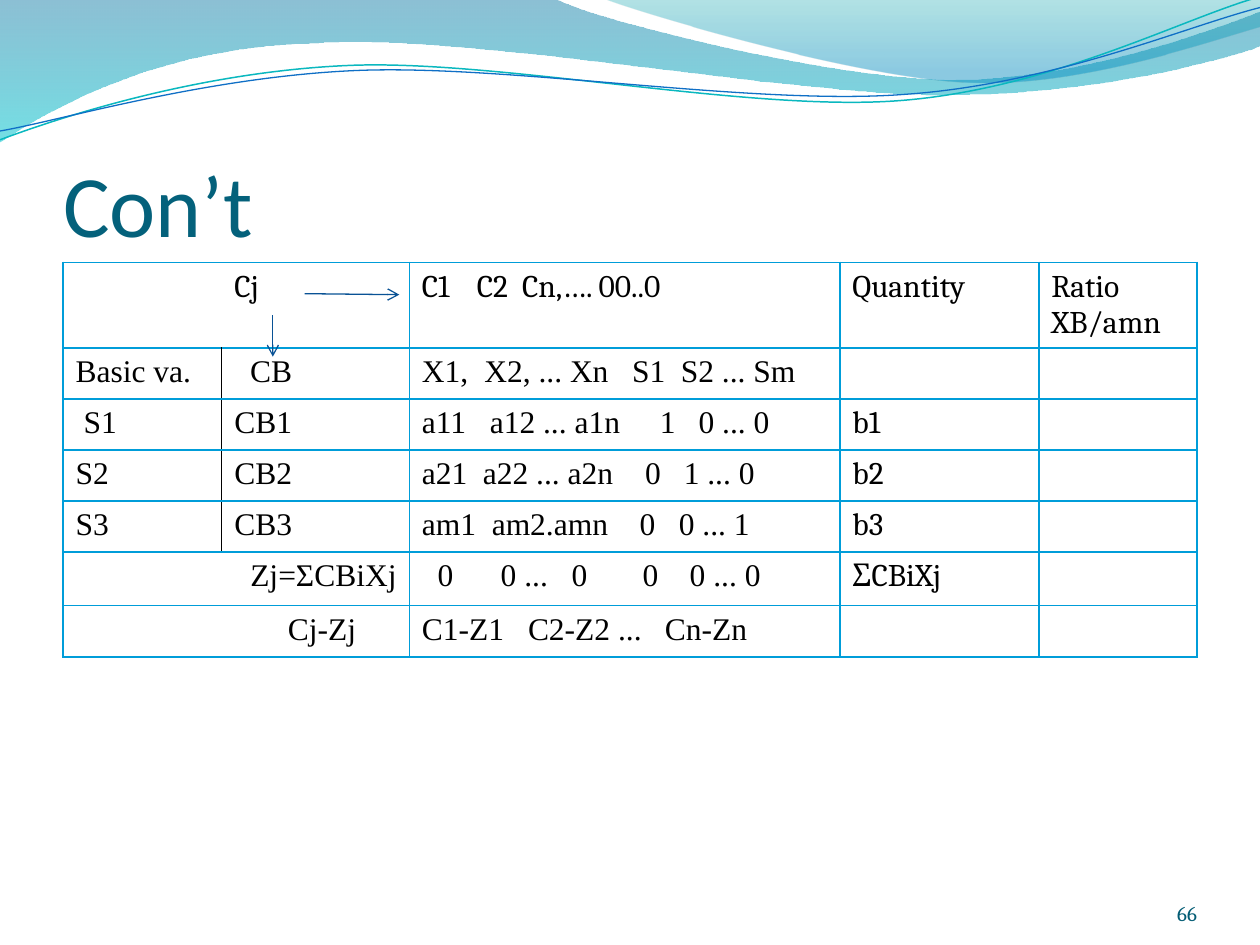
from lxml import etree
from pptx import Presentation
from pptx import util as u
from pptx.dml.color import RGBColor
from pptx.enum import shapes, text
from pptx.oxml import ns

WHITE = RGBColor(0xFF, 0xFF, 0xFF)
BLACK = RGBColor(0x00, 0x00, 0x00)
TITLE = RGBColor(0x04, 0x61, 0x7B)
NUMBER = RGBColor(0x04, 0x5D, 0x75)
BORDER = RGBColor(0x00, 0x9D, 0xD9)
ARROW = RGBColor(0x09, 0x52, 0x95)
TEAL = RGBColor(0x0A, 0xB8, 0xBF)
BLUE = RGBColor(0x0F, 0x6F, 0xC6)
BAND_TOP = RGBColor(0x00, 0x74, 0xA1)
BAND_END = RGBColor(0x00, 0xC6, 0xCF)
CREST_TOP = RGBColor(0x00, 0xA1, 0xA9)
CREST_END = RGBColor(0x00, 0x8B, 0xBF)
CM_PER_INCH = 2.54

BAND = [(0, 0), (4.4, -0.01), (4.76, 0.17, 6.64, 0.63, 7.58, 0.63),
        (8.53, 0.63, 9.58, 0.26, 10, 0.09), (10.01, 0.36),
        (9.83, 0.44, 8.7, 0.76, 7.46, 0.75), (6.22, 0.75, 3.82, 0.28, 2.57, 0.34),
        (1.29, 0.36, 0.46, 0.83, -0.01, 1.13), (0, 0)]
CREST = [(4.79, -0.01), (5.09, 0.11, 6.82, 0.62, 7.69, 0.65),
         (8.56, 0.69, 9.61, 0.32, 10, 0.21), (10, 0), (4.79, -0.01)]
TEAL_WAVE = [(0, 1.11), (0.48, 0.93, 1.58, 0.57, 2.77, 0.52),
             (3.95, 0.47, 5.93, 0.89, 7.13, 0.8), (8.33, 0.71, 9.38, 0.15, 9.98, -0.02)]
BLUE_WAVE = [(0, 1.04), (0.47, 0.96, 1.64, 0.61, 2.83, 0.56),
             (4.03, 0.51, 5.97, 0.84, 7.17, 0.75), (8.36, 0.67, 9.41, 0.21, 10, 0.06)]

COLS = [3.2, 3.78, 8.68, 4.01, 3.19]
ROWS = [1.03, 1.03, 1.03, 1.03, 1.03, 1.08, 1.03]
CELLS = [
    ["\tCj", "", "C1\tC2\tCn,…. 00..0", "Quantity", "Ratio\nXB/amn"],
    ["Basic va.", "\tCB", "X1,\tX2, ... Xn\tS1\tS2 ... Sm", "", ""],
    ["\tS1", "CB1", "a11\ta12 ... a1n\t1\t0 ... 0", "b1", ""],
    ["S2", "CB2", "a21\ta22 ... a2n\t0\t1 ... 0", "b2", ""],
    ["S3", "CB3", "am1\tam2.amn\t0\t0 ... 1", "b3", ""],
    ["Zj=ΣCBiXj", "", "\t0\t0 ...\t0\t0\t0 ... 0", "ΣCBiXj", ""],
    ["\tCj-Zj", "", "C1-Z1\tC2-Z2 ...\tCn-Zn", "", ""],
]
TABS = {
    (0, 0): [3.2], (1, 1): [0.32], (2, 0): [0.16], (6, 0): [4.28],
    (0, 2): [1.11, 2.02], (1, 2): [1.26, 4.24, 5.22],
    (2, 2): [1.37, 4.8, 5.58], (3, 2): [1.23, 4.5, 5.28],
    (4, 2): [1.41, 4.39, 5.18], (5, 2): [0.32, 1.59, 3.02, 4.45, 5.4],
    (6, 2): [2.14, 4.9],
}
MERGED_ROWS = (0, 5, 6)


class Deck:
    serif = "Cambria"
    roman = "Times New Roman"
    sans = "Calibri"

    def __init__(self, slide):
        self.s = slide
        bg = slide.background.fill
        bg.solid()
        bg.fore_color.rgb = WHITE

    def run(self, p, words, size, font, color):
        r = p.add_run()
        r.text = words
        r.font.size = u.Pt(size)
        r.font.name = font
        r.font.color.rgb = color

    def outline(self, segments, closed):
        points = [(u.Cm(x * CM_PER_INCH), u.Cm(y * CM_PER_INCH))
                  for seg in segments for x, y in zip(seg[::2], seg[1::2])]
        builder = self.s.shapes.build_freeform(*points[0])
        builder.add_line_segments(points[1:], close=closed)
        sp = builder.convert_to_shape()
        sp.shadow.inherit = False
        steps = iter(list(sp._element.iter(ns.qn("a:lnTo"))))
        for seg in segments[1:]:
            step = next(steps)
            if len(seg) == 6:
                curve = etree.Element(ns.qn("a:cubicBezTo"))
                step.addprevious(curve)
                for part in (step, next(steps), next(steps)):
                    curve.append(part[0])
                    part.getparent().remove(part)
        return sp

    def band(self, segments, stops):
        sp = self.outline(segments, True)
        sp.line.fill.background()
        sp.fill.gradient()
        sp.fill.gradient_angle = 270
        for stop, (position, color, _) in zip(sp.fill.gradient_stops, stops):
            stop.position = position
            stop.color.rgb = color
        colors = sp._element.spPr.iter(ns.qn("a:srgbClr"))
        for clr, (_, _, alpha) in zip(list(colors), stops):
            etree.SubElement(clr, ns.qn("a:alpha"), val=str(alpha * 1000))

    def wave(self, segments, color, width):
        sp = self.outline(segments, False)
        sp.fill.background()
        sp.line.color.rgb = color
        sp.line.width = u.Pt(width)

    def frame(self, sp, left, top, width, height):
        sp.left, sp.top, sp.width, sp.height = map(u.Cm, (left, top, width, height))
        tf = sp.text_frame
        tf.word_wrap = True
        tf.auto_size = text.MSO_AUTO_SIZE.NONE
        tf.vertical_anchor = text.MSO_ANCHOR.BOTTOM
        tf.margin_left = tf.margin_right = tf.margin_top = tf.margin_bottom = 0
        return tf

    def title(self, words, *box):
        tf = self.frame(self.s.shapes.title, *box)
        tf.margin_top = u.Cm(0.13)
        p = tf.paragraphs[0]
        p.alignment = text.PP_ALIGN.LEFT
        self.run(p, words, 50, self.sans, TITLE)

    def number(self, words, *box):
        sp = self.s.shapes.add_textbox(*map(u.Cm, box))
        p = self.frame(sp, *box).paragraphs[0]
        p.alignment = text.PP_ALIGN.RIGHT
        self.run(p, words, 12, self.serif, NUMBER)

    def borders(self, cell, colors):
        tcPr = cell._tc.get_or_add_tcPr()
        for side, color in zip("LRTB", colors):
            ln = etree.SubElement(tcPr, ns.qn("a:ln" + side), w=str(u.Pt(1)))
            fill = etree.SubElement(ln, ns.qn("a:solidFill"))
            etree.SubElement(fill, ns.qn("a:srgbClr"), val=str(color))

    def tabs(self, p, stops):
        tab_list = etree.SubElement(p._p.get_or_add_pPr(), ns.qn("a:tabLst"))
        for stop in stops:
            etree.SubElement(tab_list, ns.qn("a:tab"), pos=str(u.Cm(stop)), algn="l")

    def table(self, *box):
        frame = self.s.shapes.add_table(len(ROWS), len(COLS), *map(u.Cm, box))
        tbl = frame.table
        tbl.first_row = tbl.horz_banding = False
        for col, width in zip(tbl.columns, COLS):
            col.width = u.Cm(width)
        for i, height in enumerate(ROWS):
            tbl.rows[i].height = u.Cm(height)
            split = i not in MERGED_ROWS
            if not split:
                tbl.cell(i, 0).merge(tbl.cell(i, 1))
            for j, words in enumerate(CELLS[i]):
                cell = tbl.cell(i, j)
                self.borders(cell, (BLACK if split and j == 1 else BORDER,
                                    BLACK if split and j == 0 else BORDER, BORDER, BORDER))
                cell.fill.background()
                font = self.serif if i == 0 or j > 2 else self.roman
                for k, line in enumerate(words.split("\n") if words else []):
                    tf = cell.text_frame
                    p = tf.add_paragraph() if k else tf.paragraphs[0]
                    if (i, j) in TABS:
                        self.tabs(p, TABS[i, j])
                    self.run(p, line, 18, font, BLACK)
        tbl.cell(5, 0).text_frame.paragraphs[0].alignment = text.PP_ALIGN.RIGHT
        frame.height = u.Cm(box[3])

    def arrow(self, *ends):
        c = self.s.shapes.add_connector(shapes.MSO_CONNECTOR.STRAIGHT, *map(u.Cm, ends))
        c.line.color.rgb = ARROW
        c.line.width = u.Pt(0.75)
        etree.SubElement(c.line._get_or_add_ln(), ns.qn("a:tailEnd"), type="arrow")
        etree.SubElement(c._element.spPr, ns.qn("a:effectLst"))


def main():
    prs = Presentation()
    prs.slide_width, prs.slide_height = u.Cm(25.4), u.Cm(19.05)
    d = Deck(prs.slides.add_slide(prs.slide_layouts[5]))
    d.band(BAND, [(0, BAND_TOP, 45), (1, BAND_END, 55)])
    d.band(CREST, [(0, CREST_TOP, 30), (0.8, CREST_END, 45)])
    d.wave(TEAL_WAVE, TEAL, 0.85)
    d.wave(BLUE_WAVE, BLUE, 0.75)
    d.title("Con’t", 1.27, 1.96, 22.86, 3.18)
    d.table(1.27, 5.29, 22.86, 8.03)
    d.number("66", 22.02, 17.65, 2.11, 1.02)
    d.arrow(6.14, 5.92, 8.05, 5.94)
    d.arrow(5.5, 6.35, 5.5, 7.19)
    prs.save("out.pptx")


if __name__ == "__main__":
    main()
